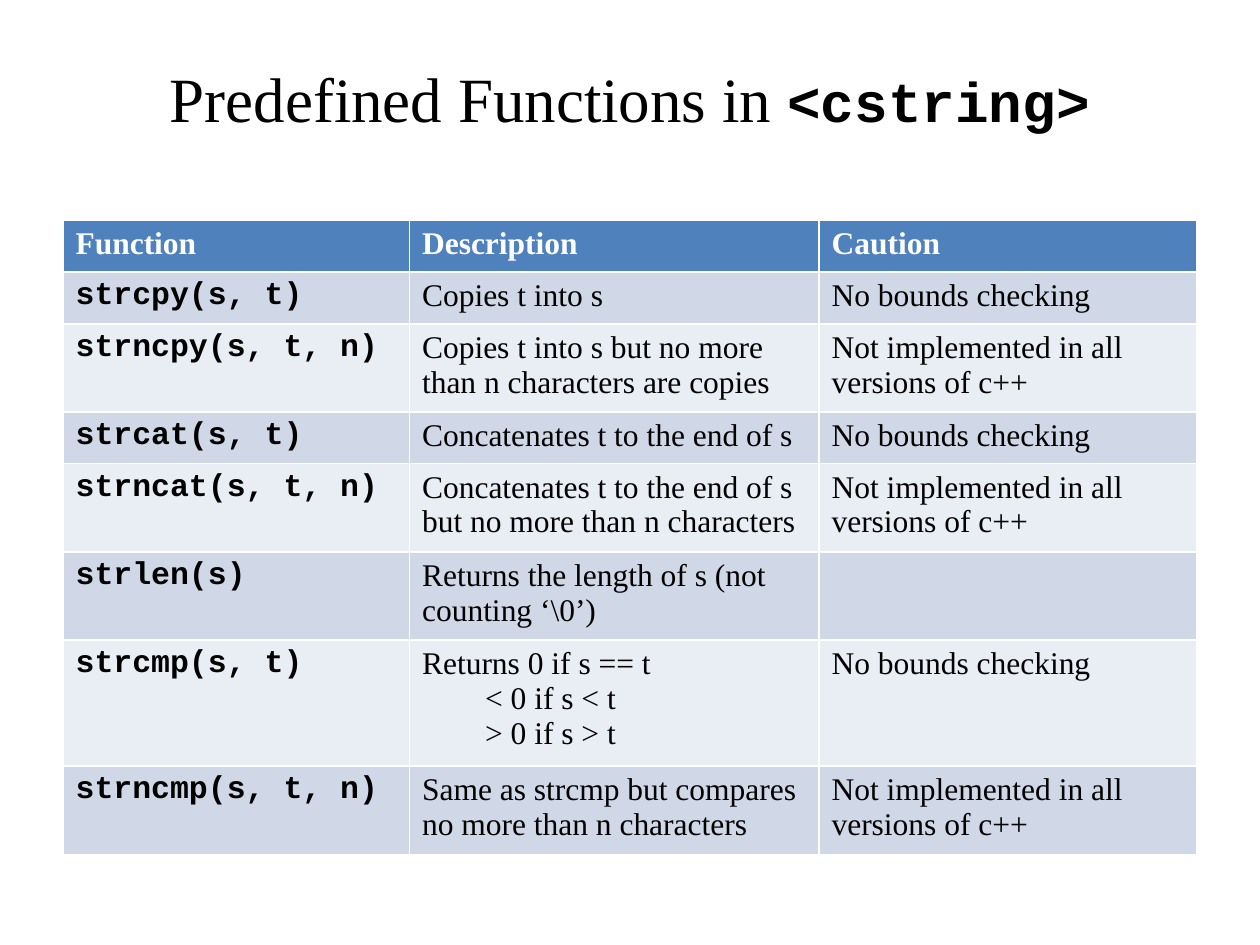
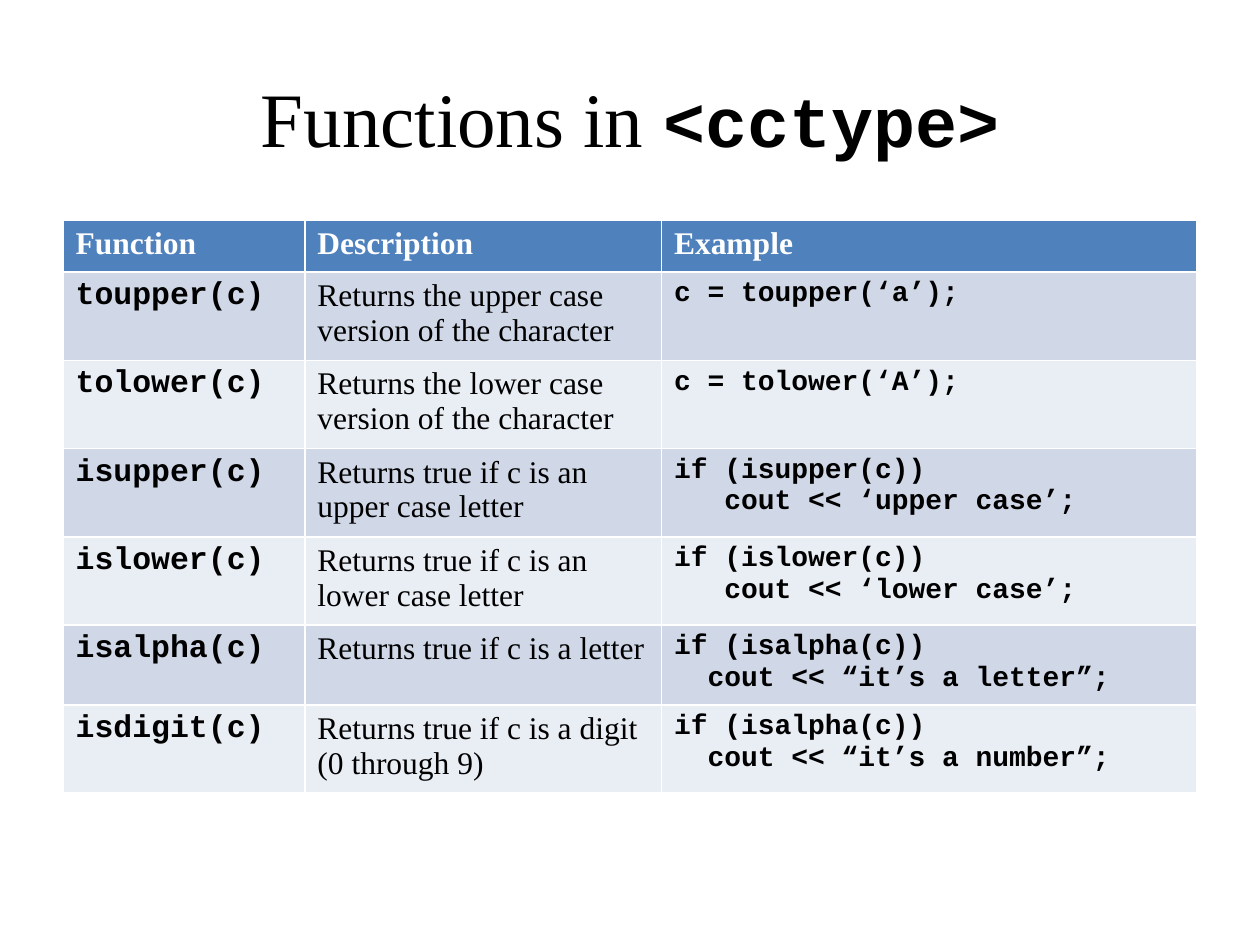
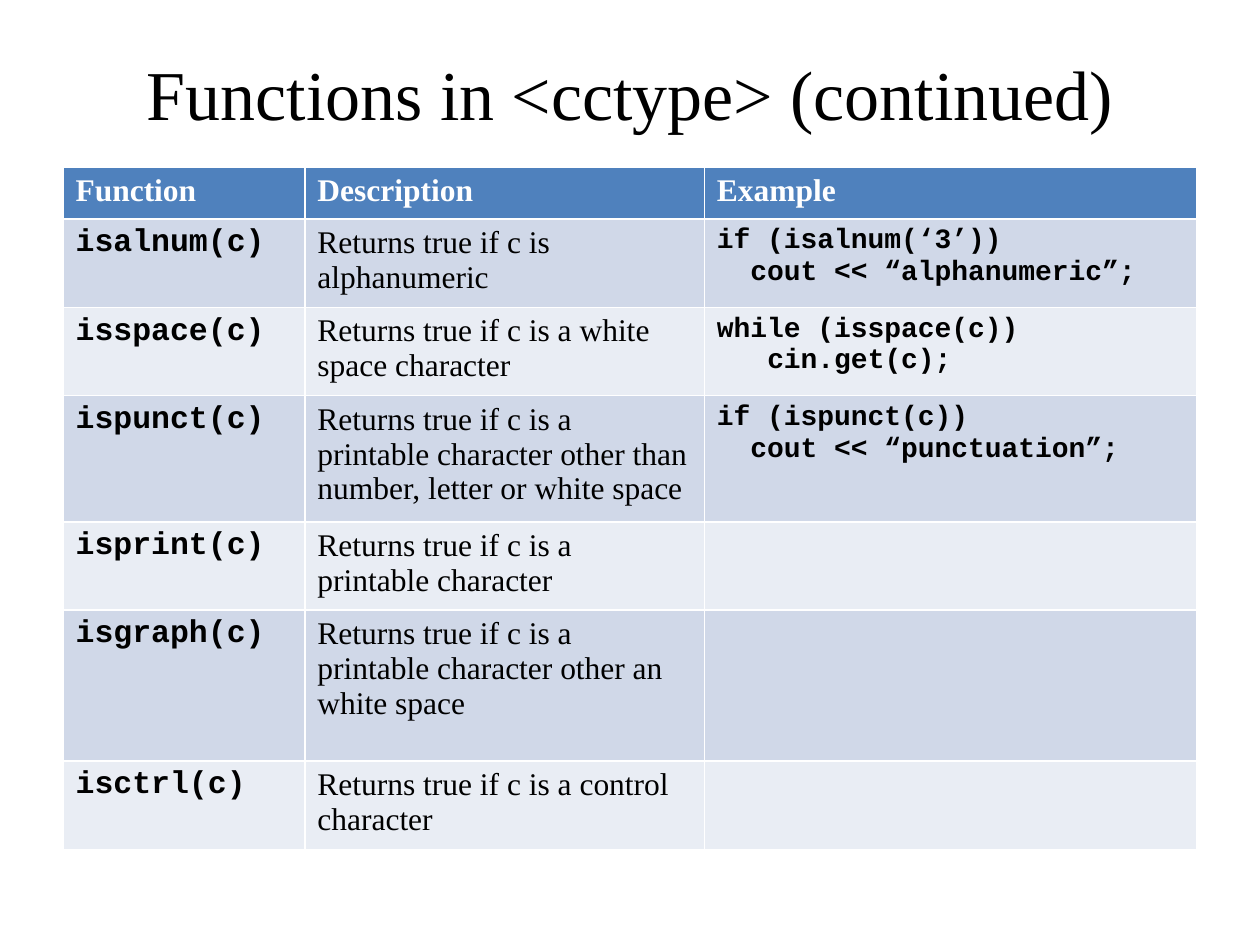
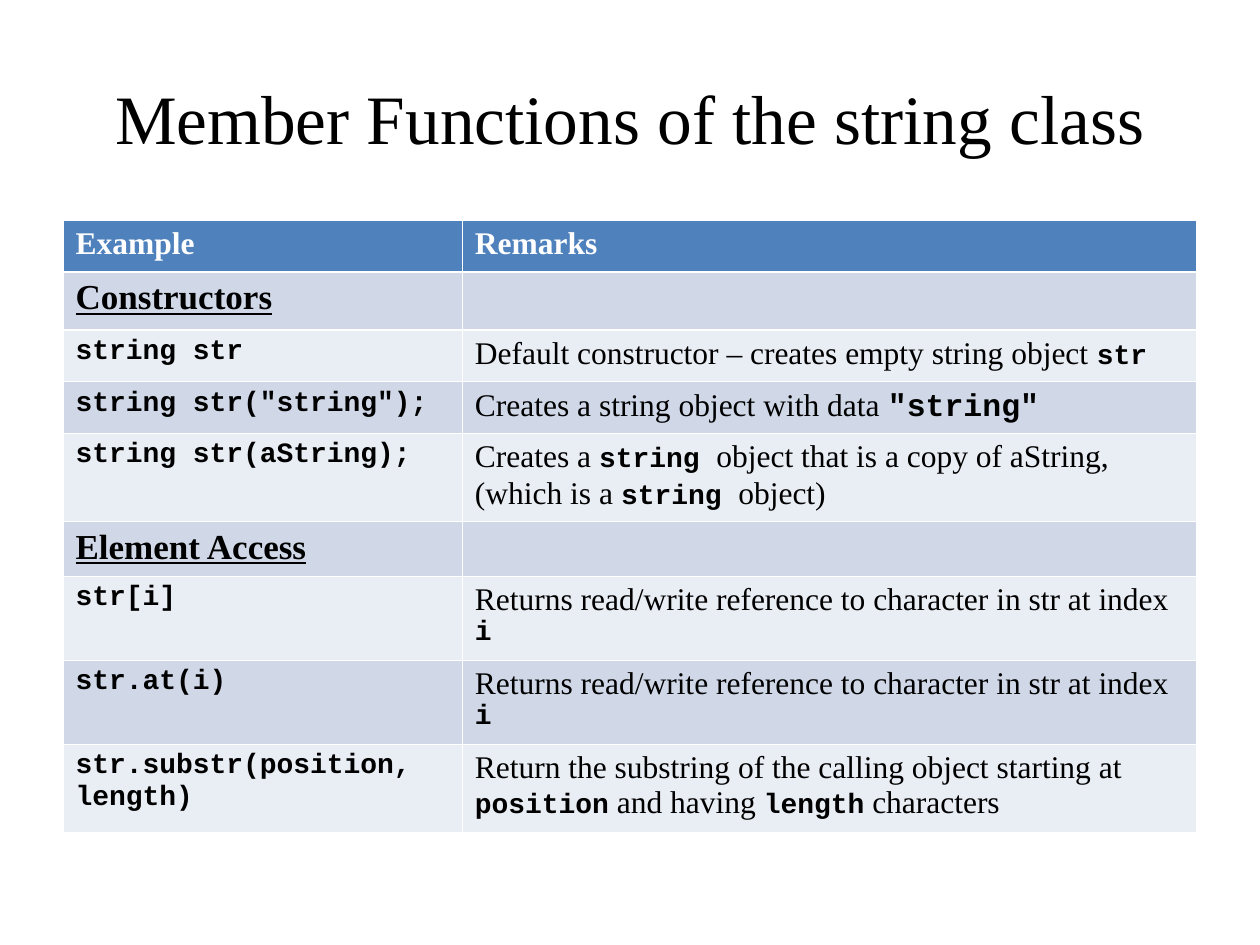
import dataclasses

import pptx
import pptx.dml.color
import pptx.enum.text
import pptx.util

BLACK = pptx.dml.color.RGBColor(0x00, 0x00, 0x00)
WHITE = pptx.dml.color.RGBColor(0xFF, 0xFF, 0xFF)
HEADER_BLUE = pptx.dml.color.RGBColor(0x4F, 0x81, 0xBD)
BAND_DARK = pptx.dml.color.RGBColor(0xD0, 0xD8, 0xE8)
BAND_LIGHT = pptx.dml.color.RGBColor(0xE9, 0xED, 0xF4)

SERIF = "Times New Roman"
MONO = "Courier New"
SPACE_EM = {SERIF: 0.25, MONO: 0.6}

WIDTH, HEIGHT = 10, 7.5
MARGIN = WIDTH / 20
CONTENT_W = WIDTH - 2 * MARGIN
TITLE_TOP = HEIGHT / 25
ROW_H = 0.41


@dataclasses.dataclass(frozen=True)
class Style:
    """Look of a stretch of text."""
    size: float
    name: str = SERIF
    bold: bool = False
    underline: bool = False
    color: pptx.dml.color.RGBColor = BLACK


HEADER = Style(18, bold=True, color=WHITE)
BODY = Style(18)
SECTION = Style(20, bold=True, underline=True)
CODE = Style(18, MONO, bold=True)
SMALL_CODE = Style(16, MONO, bold=True)

NO_BOUNDS = "No bounds checking"
NOT_ALL = "Not implemented in all versions of c++"
CHAR_REFERENCE = [("Returns read/write reference to character in str at index ", BODY),
                  ("i", SMALL_CODE)]

CSTRING_ROWS = [
    ("Function", "Description", "Caution"),
    ("strcpy(s, t)", "Copies t into s", NO_BOUNDS),
    ("strncpy(s, t, n)", "Copies t into s but no more than n characters are copies", NOT_ALL),
    ("strcat(s, t)", "Concatenates t to the end of s", NO_BOUNDS),
    ("strncat(s, t, n)", "Concatenates t to the end of s but no more than n characters",
     NOT_ALL),
    ("strlen(s)", "Returns the length of s (not counting ‘\\0’)", ""),
    ("strcmp(s, t)", "Returns 0 if s == t\n        < 0 if s < t\n        > 0 if s > t",
     NO_BOUNDS),
    ("strncmp(s, t, n)", "Same as strcmp but compares no more than n characters", NOT_ALL),
]

CCTYPE_ROWS = [
    ("Function", "Description", "Example"),
    ("toupper(c)", "Returns the upper case version of the character", "c = toupper(‘a’);"),
    ("tolower(c)", "Returns the lower case version of the character", "c = tolower(‘A’);"),
    ("isupper(c)", "Returns true if c is an upper case letter",
     "if (isupper(c))\n   cout << ‘upper case’;"),
    ("islower(c)", "Returns true if c is an lower case letter",
     "if (islower(c))\n   cout << ‘lower case’;"),
    ("isalpha(c)", "Returns true if c is a letter",
     "if (isalpha(c))\n  cout << “it’s a letter”;"),
    ("isdigit(c)", "Returns true if c is a digit (0 through 9)",
     "if (isalpha(c))\n  cout << “it’s a number”;"),
]

CCTYPE_MORE_ROWS = [
    ("Function", "Description", "Example"),
    ("isalnum(c)", "Returns true if c is alphanumeric",
     "if (isalnum(‘3’))\n  cout << “alphanumeric”;"),
    ("isspace(c)", "Returns true if c is a white space character",
     "while (isspace(c))\n   cin.get(c);"),
    ("ispunct(c)",
     "Returns true if c is a printable character other than number, letter or white space",
     "if (ispunct(c))\n  cout << “punctuation”;"),
    ("isprint(c)", "Returns true if c is a printable character", ""),
    ("isgraph(c)", "Returns true if c is a printable character other an white space", ""),
    ("isctrl(c)", "Returns true if c is a control character", ""),
]

STRING_ROWS = [
    ("Example", "Remarks"),
    ([("Constructors", SECTION)], ""),
    ("string str", [("Default constructor – creates empty string object ", BODY),
                    ("str", SMALL_CODE)]),
    ('string str("string");', [("Creates a string object with data ", BODY),
                               ('"string"', CODE)]),
    ("string str(aString);", [("Creates a ", BODY), ("string ", SMALL_CODE),
                              ("object that is a copy of aString, (which is a ", BODY),
                              ("string ", SMALL_CODE), ("object)", BODY)]),
    ([("Element Access", SECTION)], ""),
    ("str[i]", CHAR_REFERENCE),
    ("str.at(i)", CHAR_REFERENCE),
    ("str.substr(position, length)",
     [("Return the substring of the calling object starting at ", BODY),
      ("position", SMALL_CODE), (" and having ", BODY),
      ("length", SMALL_CODE), (" characters", BODY)]),
]


def set_font(font, style):
    """Apply a style to the font of a paragraph or run."""
    font.size = pptx.util.Pt(style.size)
    font.name = style.name
    font.bold = style.bold
    font.underline = style.underline
    font.color.rgb = style.color


def write_runs(p, runs):
    """Fill a paragraph with (text, style) runs."""
    if len(runs) == 1:
        set_font(p.font, runs[0][1])
    for text, style in runs:
        r = p.add_run()
        r.text = text
        if len(runs) > 1:
            set_font(r.font, style)


def write_lines(tf, text, style):
    """Write one paragraph a line, turning leading spaces into a left margin."""
    for i, line in enumerate(text.split("\n")):
        p = tf.add_paragraph() if i else tf.paragraphs[0]
        code = line.lstrip()
        indent = (len(line) - len(code)) * SPACE_EM[style.name] * style.size
        if indent:
            p._p.get_or_add_pPr().set("marL", str(pptx.util.Pt(indent)))
        write_runs(p, [(code, style)])


def add_title(s, height, runs):
    """Add a centred title across the content width."""
    sp = s.shapes.add_textbox(*map(pptx.util.Inches, (MARGIN, TITLE_TOP, CONTENT_W, height)))
    tf = sp.text_frame
    tf.word_wrap = True
    tf.vertical_anchor = pptx.enum.text.MSO_ANCHOR.MIDDLE
    p = tf.paragraphs[0]
    p.alignment = pptx.enum.text.PP_ALIGN.CENTER
    write_runs(p, runs)


def add_function_table(s, top, height, columns, rows, tall_rows=()):
    """Add a banded table; columns are (width, style), tall_rows are (row, height)."""
    gf = s.shapes.add_table(len(rows), len(columns), *map(
        pptx.util.Inches, (MARGIN, top, CONTENT_W, ROW_H * len(rows))))
    table = gf.table
    for column, (width, _) in zip(table.columns, columns):
        column.width = pptx.util.Inches(width)
    for i, row_height in tall_rows:
        table.rows[i].height = pptx.util.Inches(row_height)
    for i, row in enumerate(rows):
        band = BAND_DARK if i % 2 else BAND_LIGHT
        for j, content in enumerate(row):
            cell = table.cell(i, j)
            cell.fill.solid()
            cell.fill.fore_color.rgb = band if i else HEADER_BLUE
            if isinstance(content, list):
                write_runs(cell.text_frame.paragraphs[0], content)
            elif content:
                write_lines(cell.text_frame, content, columns[j][1] if i else HEADER)
    gf.height = pptx.util.Inches(height)


def main():
    """Build the four slides of function tables."""
    prs = pptx.Presentation()
    prs.slide_width, prs.slide_height = pptx.util.Inches(WIDTH), pptx.util.Inches(HEIGHT)
    blank = prs.slide_layouts[6]

    s = prs.slides.add_slide(blank)
    add_title(s, 0.95, [("Predefined Functions in ", Style(36)),
                        ("<cstring>", Style(32, MONO, bold=True))])
    add_function_table(s, 1.75, 5.02, [(2.75, CODE), (3.25, BODY), (3, BODY)], CSTRING_ROWS)

    s = prs.slides.add_slide(blank)
    add_title(s, 1.25, [("Functions in ", Style(44)),
                        ("<cctype>", Style(40, MONO, bold=True))])
    add_function_table(s, 1.75, 4.54, [(1.92, CODE), (2.83, BODY), (4.25, SMALL_CODE)],
                       CCTYPE_ROWS)

    s = prs.slides.add_slide(blank)
    add_title(s, 0.87, [("Functions in <cctype> (continued)", Style(40))])
    add_function_table(s, 1.33, 5.51, [(1.92, CODE), (3.17, BODY), (3.91, SMALL_CODE)],
                       CCTYPE_MORE_ROWS, [(5, 1.2)])

    s = prs.slides.add_slide(blank)
    add_title(s, 1.25, [("Member Functions of the string class", Style(39.6))])
    add_function_table(s, 1.75, 4.88, [(3.17, SMALL_CODE), (5.83, BODY)],
                       STRING_ROWS, [(1, 0.46)])

    prs.save("out.pptx")


if __name__ == "__main__":
    main()
